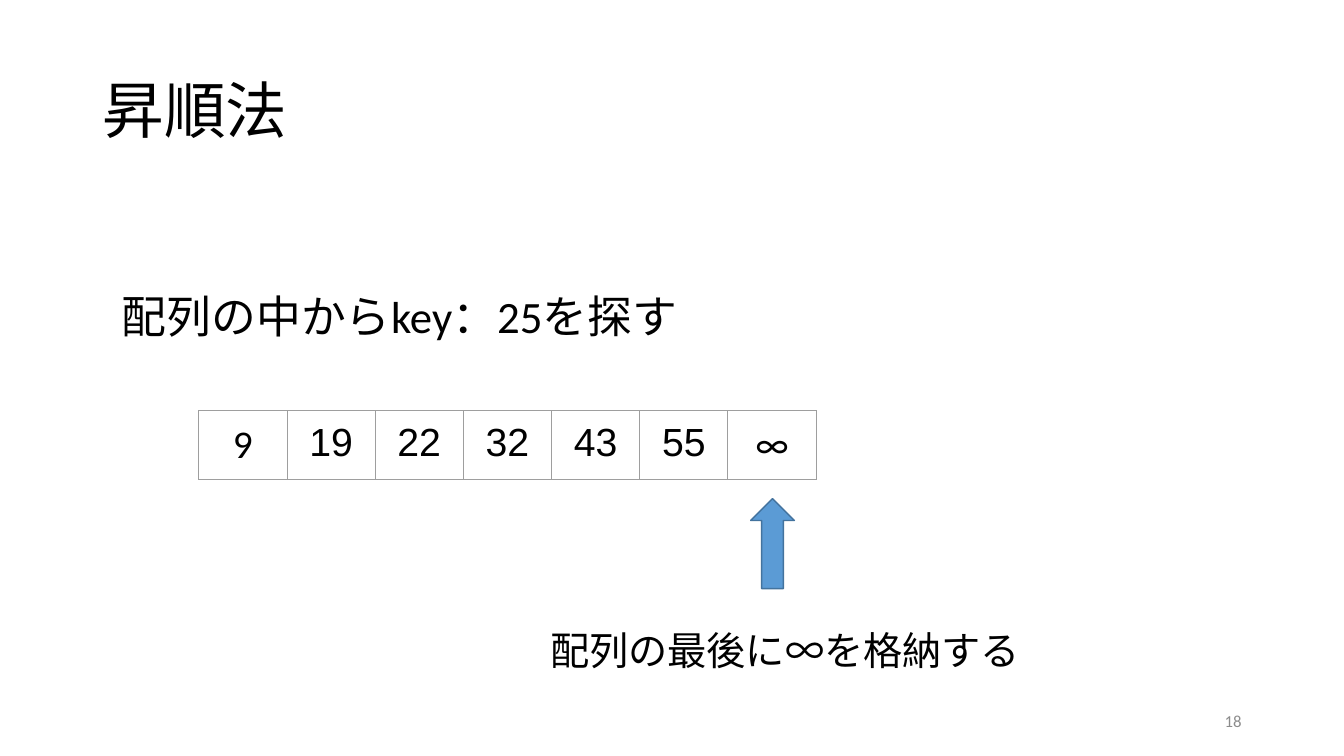
from lxml import etree
from pptx import Presentation
from pptx.dml.color import RGBColor
from pptx.enum.shapes import MSO_SHAPE
from pptx.enum.text import MSO_ANCHOR as ANCHOR, MSO_AUTO_SIZE as AUTO, PP_ALIGN as ALIGN
from pptx.oxml.ns import qn
from pptx.util import Pt

COLORS = {"text": "000000", "number": "8C8C8C", "grid": "9E9E9E",
          "arrow": "5B9BD5", "arrow_line": "43739E"}
VALUES = ["9", "19", "22", "32", "43", "55", "∞"]
COL_W, ROW_H = 63, 49


def write(tf, text, size, color="text", font="Calibri", align=ALIGN.LEFT):
    p = tf.paragraphs[0]
    p.alignment = align
    r = p.add_run()
    r.text = text
    for name, value in {"size": Pt(size), "name": font}.items():
        setattr(r.font, name, value)
    r.font.color.rgb = RGBColor.from_string(COLORS[color])
    return p


def add_borders(cell):
    tc_pr = cell._tc.get_or_add_tcPr()
    for i, side in enumerate(("lnL", "lnR", "lnT", "lnB")):
        ln = etree.Element(qn(f"a:{side}"), w=str(Pt(0.75)))
        fill = etree.SubElement(ln, qn("a:solidFill"))
        etree.SubElement(fill, qn("a:srgbClr"), val=COLORS["grid"])
        tc_pr.insert(i, ln)


prs = Presentation()
prs.slide_width, prs.slide_height = Pt(960), Pt(540)
s = prs.slides.add_slide(prs.slide_layouts[5])

# Title
title = s.shapes.title
title.left, title.top, title.width, title.height = Pt(66), Pt(28.75), Pt(828), Pt(104.4)
tf = title.text_frame
tf.auto_size, tf.vertical_anchor = AUTO.NONE, ANCHOR.MIDDLE
write(tf, "昇順法", 44).line_spacing = 0.9

# Array, one cell per value
frame = s.shapes.add_table(1, len(VALUES), Pt(142), Pt(293.5), Pt(COL_W * len(VALUES)), Pt(ROW_H))
table = frame.table
table.first_row = table.horz_banding = False
for col, value in enumerate(VALUES):
    table.columns[col].width = Pt(COL_W)
    cell = table.cell(0, col)
    for side in ("left", "right", "top", "bottom"):
        setattr(cell, f"margin_{side}", Pt(7.2))
    cell.fill.background()
    add_borders(cell)
    font = "Calibri" if value in ("9", "∞") else "Arial"
    write(cell.text_frame, value, 28, font=font, align=ALIGN.CENTER)

# Arrow to the last cell
arrow = s.shapes.add_shape(MSO_SHAPE.UP_ARROW, Pt(536.2), Pt(356.2), Pt(31.2), Pt(64.2))
arrow.shadow.inherit = False
arrow.fill.solid()
arrow.fill.fore_color.rgb = RGBColor.from_string(COLORS["arrow"])
arrow.line.color.rgb = RGBColor.from_string(COLORS["arrow_line"])
arrow.line.width = Pt(1)

# Task, explanation and slide number
for text, box, size, color, align, anchor, fit in [
    ("配列の中からkey：25を探す", (80, 203, 412.5, 46), 32, "text",
     ALIGN.LEFT, ANCHOR.TOP, AUTO.SHAPE_TO_FIT_TEXT),
    ("配列の最後に∞を格納する", (386, 443.5, 475, 41), 28, "text",
     ALIGN.LEFT, ANCHOR.TOP, AUTO.SHAPE_TO_FIT_TEXT),
    ("18", (678, 500.5, 216, 28.75), 12, "number",
     ALIGN.RIGHT, ANCHOR.MIDDLE, AUTO.NONE),
]:
    tf = s.shapes.add_textbox(*map(Pt, box)).text_frame
    for name, value in {"word_wrap": True, "auto_size": fit, "vertical_anchor": anchor}.items():
        setattr(tf, name, value)
    write(tf, text, size, color, align=align)

prs.save("out.pptx")
